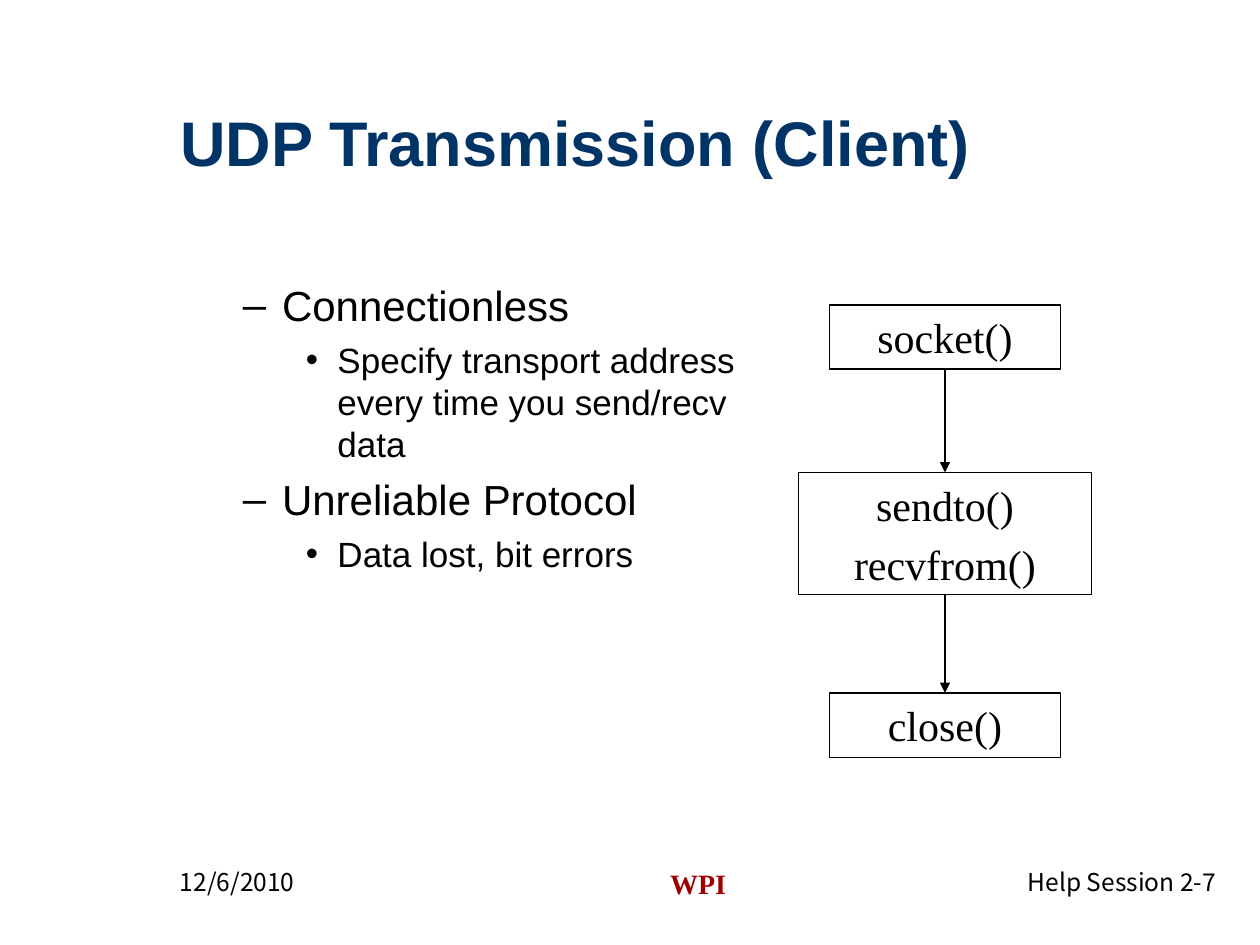
import pptx
import pptx.util
import pptx.dml.color
import pptx.enum.shapes
import pptx.enum.text
import pptx.oxml.ns
from dataclasses import dataclass
from lxml import etree

Inches = pptx.util.Inches
Pt = pptx.util.Pt
Align = pptx.enum.text.PP_ALIGN
Anchor = pptx.enum.text.MSO_ANCHOR
qn = pptx.oxml.ns.qn


@dataclass(frozen=True)
class Theme:
    sans: str = "Arial"
    serif: str = "Times New Roman"
    footer_font: str = "Noto Sans CJK KR"
    ink: str = "000000"
    navy: str = "003366"
    crimson: str = "9E0000"
    title_size: int = 36
    main_size: int = 24
    sub_size: int = 20
    mark_size: int = 16
    footer_size: int = 14
    line_width: float = 0.75


class Deck:
    def __init__(self, theme):
        self.theme = theme
        self.prs = pptx.Presentation()
        self.prs.slide_width = Inches(10)
        self.prs.slide_height = Inches(7.5)
        self.s = self.prs.slides.add_slide(self.prs.slide_layouts[5])

    def color(self, value):
        return pptx.dml.color.RGBColor.from_string(value)

    def run(self, p, text, font, size, color, bold=False):
        r = p.add_run()
        r.text = text
        r.font.name = font
        r.font.size = Pt(size)
        r.font.bold = bold
        r.font.color.rgb = self.color(color)

    def title(self, text, left, top, width, height):
        t = self.theme
        sp = self.s.shapes.title
        sp.left, sp.top = Inches(left), Inches(top)
        sp.width, sp.height = Inches(width), Inches(height)
        tf = sp.text_frame
        tf.auto_size = pptx.enum.text.MSO_AUTO_SIZE.NONE
        tf.vertical_anchor = Anchor.MIDDLE
        p = tf.paragraphs[0]
        p.alignment = Align.LEFT
        self.run(p, text, t.sans, t.title_size, t.navy, True)

    def text_box(self, left, top, width, height):
        sp = self.s.shapes.add_textbox(
            Inches(left), Inches(top), Inches(width), Inches(height))
        sp.text_frame.word_wrap = True
        return sp.text_frame

    def footer(self, text, left, width, align, font, size, color, bold=False):
        p = self.text_box(left, 6.83, width, 0.5).paragraphs[0]
        p.alignment = align
        self.run(p, text, font, size, color, bold)

    def bullets(self, items, left, top, width, height):
        t = self.theme
        styles = {1: ("–", 0.81, 0.31, t.main_size),
                  2: ("•", 1.25, 0.25, t.sub_size)}
        tf = self.text_box(left, top, width, height)
        for i, (level, text) in enumerate(items):
            mark, margin, hang, size = styles[level]
            p = tf.add_paragraph() if i else tf.paragraphs[0]
            p.level = level
            pPr = p._p.get_or_add_pPr()
            pPr.set("marL", str(Inches(margin)))
            pPr.set("indent", str(-Inches(hang)))
            etree.SubElement(pPr, qn("a:buFont"), typeface=t.sans)
            etree.SubElement(pPr, qn("a:buChar"), char=mark)
            if i:
                p.space_before = Pt(size * 0.23)
            self.run(p, text, t.sans, size, t.ink)

    def call_box(self, calls, center, top, width, height):
        t = self.theme
        sp = self.s.shapes.add_shape(
            pptx.enum.shapes.MSO_SHAPE.RECTANGLE, Inches(center - width / 2),
            Inches(top), Inches(width), Inches(height))
        sp.shadow.inherit = False
        sp.fill.background()
        sp.line.color.rgb = self.color(t.ink)
        sp.line.width = Pt(t.line_width)
        tf = sp.text_frame
        tf.word_wrap = True
        tf.vertical_anchor = Anchor.MIDDLE
        for i, call in enumerate(calls):
            p = tf.add_paragraph() if i else tf.paragraphs[0]
            p.alignment = Align.CENTER
            if i:
                p.line_spacing = 0.65
                p.space_before = Pt(14)
            self.run(p, call, t.serif, t.main_size, t.ink)
        return sp

    def arrow(self, upper, lower):
        t = self.theme
        c = self.s.shapes.add_connector(
            pptx.enum.shapes.MSO_CONNECTOR.STRAIGHT, 0, 0, 0, 0)
        c.begin_connect(upper, 2)
        c.end_connect(lower, 0)
        c.line.color.rgb = self.color(t.ink)
        c.line.width = Pt(t.line_width)
        etree.SubElement(c.line._get_or_add_ln(), qn("a:tailEnd"), type="triangle")
        etree.SubElement(c._element.spPr, qn("a:effectLst"))


def main():
    t = Theme()
    deck = Deck(t)
    deck.title("UDP Transmission (Client)", 1.33, 0.5, 8.25, 1.25)
    deck.bullets([
        (1, "Connectionless"),
        (2, "Specify transport address every time you send/recv data"),
        (1, "Unreliable Protocol"),
        (2, "Data lost, bit errors"),
    ], 1.33, 2.17, 4.75, 4.5)

    steps = [
        (["socket()"], 2.42, 1.83, 0.51),
        (["sendto()", "recvfrom()"], 3.75, 2.33, 0.97),
        (["close()"], 5.5, 1.83, 0.51),
    ]
    boxes = [deck.call_box(calls, 7.5, *place) for calls, *place in steps]
    for upper, lower in zip(boxes, boxes[1:]):
        deck.arrow(upper, lower)

    small = (t.footer_font, t.footer_size, t.ink)
    deck.footer("12/6/2010", 1.33, 2.08, Align.LEFT, *small)
    deck.footer("WPI", 4, 3.08, Align.CENTER, t.serif, t.mark_size, t.crimson, True)
    deck.footer("Help Session 2-7", 7.67, 2.08, Align.RIGHT, *small)
    deck.prs.save("out.pptx")


if __name__ == "__main__":
    main()
